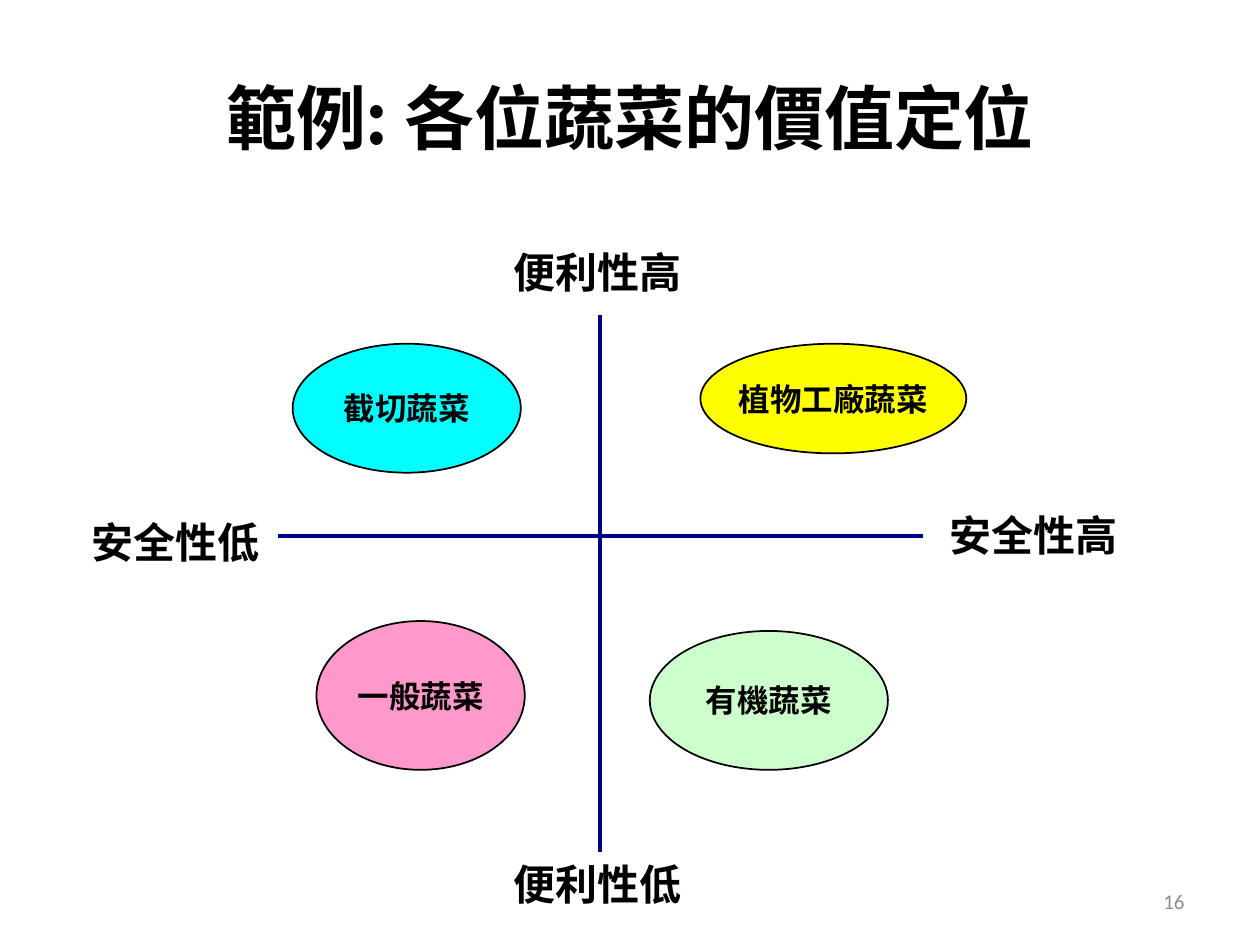
"""Build a positioning map of vegetables by safety and convenience."""
from lxml import etree
from pptx import Presentation
from pptx.dml.color import RGBColor
from pptx.enum.shapes import MSO_CONNECTOR as LINE, MSO_SHAPE as SHAPE
from pptx.enum.text import MSO_ANCHOR as ANCHOR, MSO_AUTO_SIZE as FIT, PP_ALIGN as ALIGN
from pptx.oxml.ns import qn
from pptx.util import Cm, Pt


def color(hex_code):
    return RGBColor.from_string(hex_code)


def write(frame, text, size=24, font="Arial", ink="000000", bold=True,
          align=ALIGN.LEFT, anchor=ANCHOR.TOP, wrap=True, fit=FIT.NONE):
    frame.word_wrap = wrap
    frame.auto_size = fit
    frame.vertical_anchor = anchor
    paragraph = frame.paragraphs[0]
    paragraph.alignment = align
    run = paragraph.add_run()
    run.text = text
    run.font.size = Pt(size)
    run.font.name = font
    run.font.bold = bold
    run.font.color.rgb = color(ink)
    east_asian = etree.SubElement(run.font._element, qn("a:ea"))
    east_asian.set("typeface", "Noto Sans CJK SC")


prs = Presentation()
prs.slide_width, prs.slide_height = Cm(25.4), Cm(19.05)
slide = prs.slides.add_slide(prs.slide_layouts[5])
shapes = slide.shapes

title = shapes.title
title.left, title.top, title.width, title.height = Cm(1.27), Cm(0.76), Cm(22.86), Cm(3.18)
write(title.text_frame, "範例: 各位蔬菜的價值定位", size=40, font="Noto Sans CJK SC",
      align=ALIGN.CENTER, anchor=ANCHOR.MIDDLE)

center_x, center_y = 12.1, 10.8
axes = [
    (5.6, center_y, 18.6, center_y),
    (center_x, 6.35, center_x, 17.18),
]
for ends in axes:
    axis = shapes.add_connector(LINE.STRAIGHT, *map(Cm, ends))
    axis.line.color.rgb = color("000080")
    axis.line.width = Pt(2)
    etree.SubElement(axis._element.spPr, qn("a:effectLst"))

axis_labels = [
    ("安全性低", 1.6, 10.29, 4.01),
    ("安全性高", 18.9, 10.14, 4.01),
    ("便利性高", 10.1, 4.85, 4.4),
    ("便利性低", 10.1, 17.18, 4.2),
]
for text, left, top, width in axis_labels:
    label = shapes.add_textbox(Cm(left), Cm(top), Cm(width), Cm(1.27))
    write(label.text_frame, text, fit=FIT.SHAPE_TO_FIT_TEXT)

vegetables = [
    ("有機蔬菜", "CCFFCC", 13.1, 12.72, 4.8, 2.8),
    ("植物工廠蔬菜", "FFFF00", 14.12, 6.93, 5.36, 2.21),
    ("截切蔬菜", "00FFFF", 5.9, 6.93, 4.6, 2.6),
    ("一般蔬菜", "FF99CC", 6.38, 12.52, 4.2, 3),
]
for text, fill, *place in vegetables:
    vegetable = shapes.add_shape(SHAPE.OVAL, *map(Cm, place))
    vegetable.shadow.inherit = False
    vegetable.fill.solid()
    vegetable.fill.fore_color.rgb = color(fill)
    vegetable.line.color.rgb = color("000000")
    vegetable.line.width = Pt(1)
    write(vegetable.text_frame, text, size=18, align=ALIGN.CENTER,
          anchor=ANCHOR.MIDDLE, wrap=False)

page_number = shapes.add_textbox(Cm(18.2), Cm(17.65), Cm(5.93), Cm(1.02))
write(page_number.text_frame, "16", size=12, font="Calibri", ink="8C8C8C",
      bold=False, align=ALIGN.RIGHT, anchor=ANCHOR.MIDDLE)

prs.save("out.pptx")
